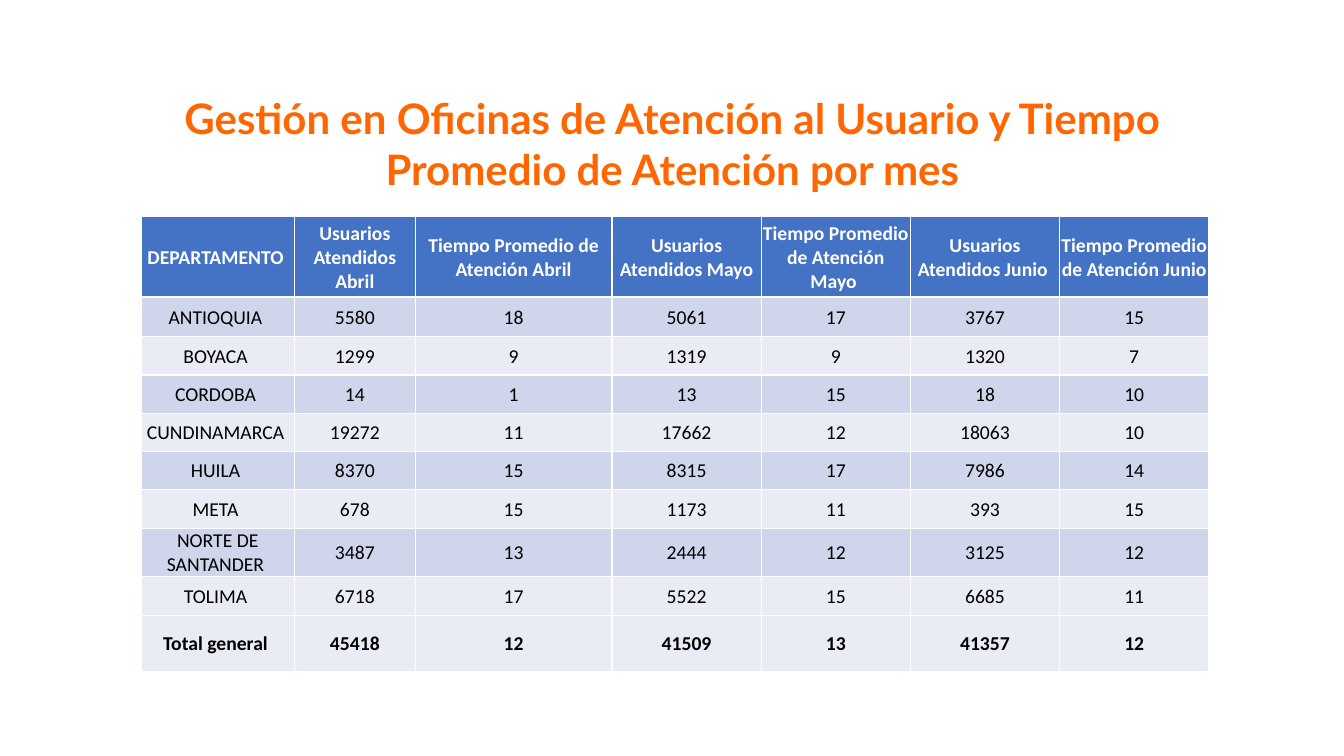
from lxml.etree import SubElement
from pptx import Presentation
from pptx.dml.color import RGBColor
from pptx.enum.text import MSO_ANCHOR, MSO_AUTO_SIZE, PP_ALIGN
from pptx.oxml.ns import qn
from pptx.util import Inches, Pt

WHITE, BLACK, ORANGE = "FFFFFF", "000000", "FF6600"
HEADER_BLUE, BAND_DARK, BAND_LIGHT = "4472C4", "CFD5EA", "E9EBF5"

TITLE = "Gestión en Oficinas de Atención al Usuario y Tiempo Promedio de Atención por mes"
HEADERS = [
    "DEPARTAMENTO ",
    "Usuarios Atendidos Abril",
    "Tiempo Promedio de Atención Abril",
    "Usuarios Atendidos Mayo",
    "Tiempo Promedio de Atención Mayo ",
    "Usuarios Atendidos Junio ",
    "Tiempo Promedio de Atención Junio",
]
DEPARTMENTS = [
    ("ANTIOQUIA ", 5580, 18, 5061, 17, 3767, 15),
    ("BOYACA ", 1299, 9, 1319, 9, 1320, 7),
    ("CORDOBA ", 14, 1, 13, 15, 18, 10),
    ("CUNDINAMARCA ", 19272, 11, 17662, 12, 18063, 10),
    ("HUILA ", 8370, 15, 8315, 17, 7986, 14),
    ("META ", 678, 15, 1173, 11, 393, 15),
    ("NORTE DE SANTANDER ", 3487, 13, 2444, 12, 3125, 12),
    ("TOLIMA ", 6718, 17, 5522, 15, 6685, 11),
]
TOTALS = ("Total general ", 45418, 12, 41509, 13, 41357, 12)
COLUMN_WIDTHS = [1.52, 1.2, 1.95] + [1.48] * 4
ROW_HEIGHTS = [0.8, 0.39] + [0.38] * 7 + [0.56]


def color(value):
    """Turn a hex string into a colour."""
    return RGBColor.from_string(value)


def write(paragraph, text, font_name, size, text_color, bold):
    """Add one centred run to a paragraph."""
    paragraph.alignment = PP_ALIGN.CENTER
    run = paragraph.add_run()
    run.text = text
    run.font.name = font_name
    run.font.size = Pt(size)
    run.font.bold = bold
    run.font.color.rgb = color(text_color)


def set_borders(cell, widths):
    """Draw white borders with the given widths per side."""
    properties = cell._tc.get_or_add_tcPr()
    for side, width in widths.items():
        line = SubElement(properties, qn(f"a:ln{side}"), w=str(Pt(width)))
        fill = SubElement(line, qn("a:solidFill"))
        SubElement(fill, qn("a:srgbClr"), val=WHITE)


def fill_cell(cell, text, fill, text_color, bold, borders):
    """Format one table cell and write its text."""
    cell.margin_left = cell.margin_right = cell.margin_top = Inches(0.01)
    cell.margin_bottom = 0
    cell.vertical_anchor = MSO_ANCHOR.MIDDLE
    set_borders(cell, borders)
    cell.fill.solid()
    cell.fill.fore_color.rgb = color(fill)
    write(cell.text_frame.paragraphs[0], text, "Calibri", 14, text_color, bold)


def add_title(slide, left, top, width, height):
    """Place the slide title in its box."""
    box = slide.shapes.add_textbox(Inches(left), Inches(top), Inches(width), Inches(height))
    box.text_frame.word_wrap = True
    box.text_frame.auto_size = MSO_AUTO_SIZE.SHAPE_TO_FIT_TEXT
    write(box.text_frame.paragraphs[0], TITLE, "Lato", 30, ORANGE, True)


def add_attention_table(slide, left, top):
    """Place the table of users attended and average times."""
    records = [HEADERS, *DEPARTMENTS, TOTALS]
    table = slide.shapes.add_table(
        len(records), len(HEADERS), Inches(left), Inches(top),
        Inches(sum(COLUMN_WIDTHS)), Inches(sum(ROW_HEIGHTS)),
    ).table
    for column, width in zip(table.columns, COLUMN_WIDTHS):
        column.width = Inches(width)
    for row, height in zip(table.rows, ROW_HEIGHTS):
        row.height = Inches(height)
    last = len(records) - 1
    for row_index, record in enumerate(records):
        is_header, is_total = row_index == 0, row_index == last
        if is_header:
            fill = HEADER_BLUE
        elif is_total or row_index % 2 == 0:
            fill = BAND_LIGHT
        else:
            fill = BAND_DARK
        borders = {"L": 1, "R": 1, "T": 1.5 if row_index == 1 else 1, "B": 1.5 if is_header else 1}
        for column_index, value in enumerate(record):
            fill_cell(
                table.cell(row_index, column_index), str(value), fill,
                WHITE if is_header else BLACK, is_header or is_total, borders,
            )


def main():
    """Build the slide and save it."""
    presentation = Presentation()
    presentation.slide_width = Inches(13.33)
    presentation.slide_height = Inches(7.5)
    slide = presentation.slides.add_slide(presentation.slide_layouts[6])
    add_attention_table(slide, 1.4, 2.15)
    add_title(slide, 1.35, 0.87, 10.64, 1.11)
    presentation.save("out.pptx")


if __name__ == "__main__":
    main()
